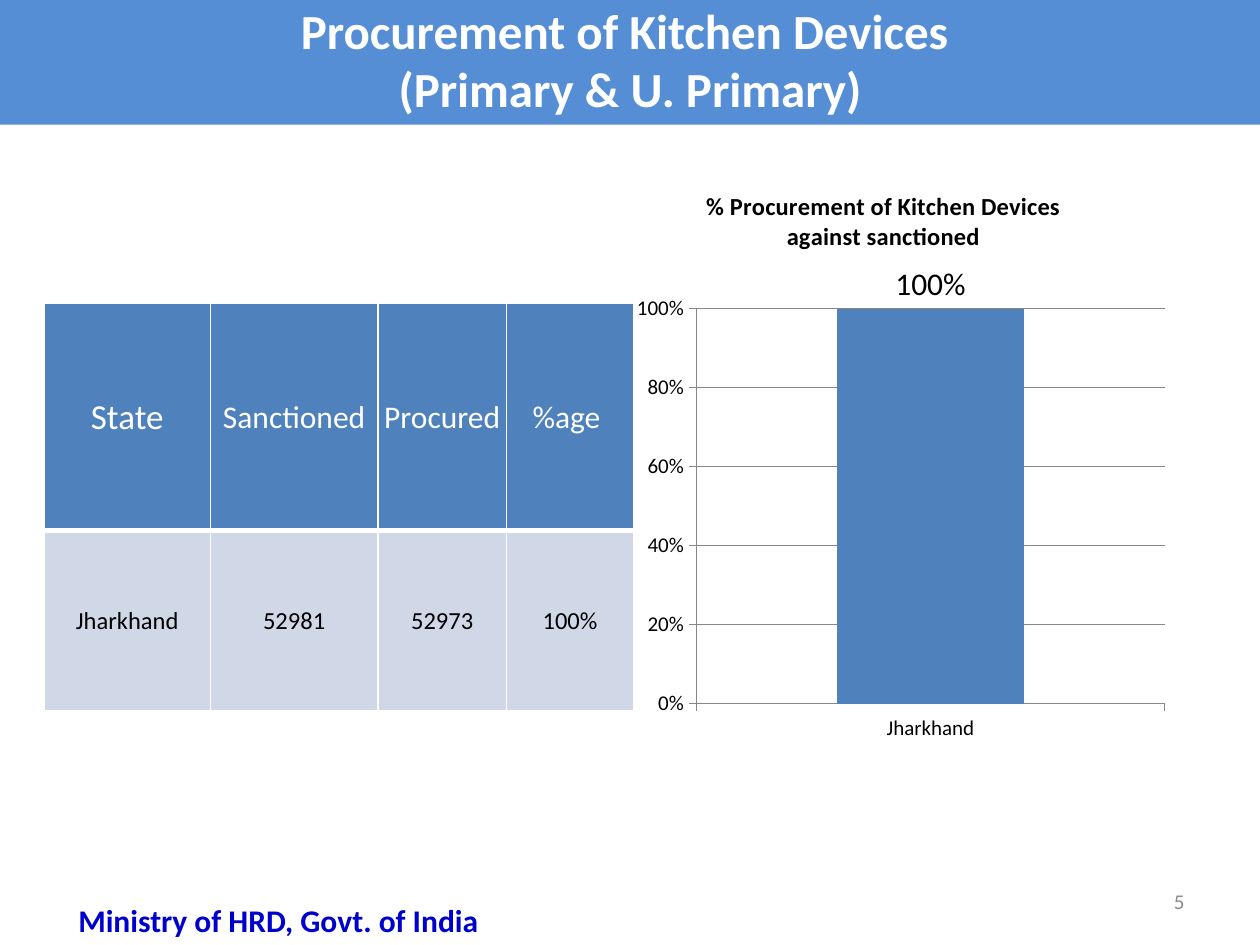
from dataclasses import dataclass

from lxml.etree import SubElement
from pptx import Presentation
from pptx.chart.chart import Chart
from pptx.chart.data import CategoryChartData
from pptx.dml.color import RGBColor
from pptx.enum.chart import XL_CHART_TYPE, XL_LABEL_POSITION, XL_TICK_MARK
from pptx.enum.text import MSO_ANCHOR, MSO_AUTO_SIZE, PP_ALIGN
from pptx.oxml import parse_xml
from pptx.oxml.ns import nsdecls, qn
from pptx.slide import Slide
from pptx.table import _Cell
from pptx.text.text import TextFrame
from pptx.util import Inches, Pt


@dataclass(frozen=True)
class Theme:
    font: str = "Calibri"
    banner: str = "558ED5"
    accent: str = "4F81BD"
    band: str = "D0D8E8"
    white: str = "FFFFFF"
    black: str = "000000"
    axis: str = "878787"
    number: str = "8C8C8C"
    ministry: str = "0000CC"
    title_size: int = 28
    state_size: int = 20
    large_size: int = 18
    body_size: int = 14
    small_size: int = 12


@dataclass(frozen=True)
class Caption:
    text: str
    box: tuple[float, float, float, float]
    size: int
    color: str
    align: PP_ALIGN
    anchor: MSO_ANCHOR
    bold: bool = False


THEME = Theme()
HEADERS = ("State", "Sanctioned", "Procured", "%age ")
VALUES = ("Jharkhand", "52981", "52973", "100%")
COLUMN_WIDTHS = (1.32, 1.33, 1.02, 1.01)
ROW_HEIGHTS = (1.8, 1.43)
CAPTIONS = (
    Caption("5", (7.17, 6.95, 2.33, 0.4), THEME.small_size, THEME.number,
            PP_ALIGN.RIGHT, MSO_ANCHOR.MIDDLE),
    Caption("Ministry of HRD, Govt. of India", (0.25, 7.1, 3.92, 0.4), THEME.large_size,
            THEME.ministry, PP_ALIGN.CENTER, MSO_ANCHOR.TOP, True),
)


def set_font(font, *, size: int, color: str, bold: bool = False) -> None:
    """Apply the theme typeface with a size, colour and weight."""
    font.name = THEME.font
    font.size = Pt(size)
    font.bold = bold
    font.color.rgb = RGBColor.from_string(color)


def write_text(text_frame: TextFrame, text: str, *, size: int, color: str,
               bold: bool = False, align: PP_ALIGN = PP_ALIGN.CENTER) -> None:
    """Fill a text frame with one formatted paragraph per line."""
    text_frame.text = text
    for paragraph in text_frame.paragraphs:
        paragraph.alignment = align
        for run in paragraph.runs:
            set_font(run.font, size=size, color=color, bold=bold)


def add_banner(slide: Slide) -> None:
    """Turn the title placeholder into the banner."""
    title = slide.shapes.title
    title.left, title.top = Inches(0), Inches(-0.24)
    title.width, title.height = Inches(10), Inches(1.23)
    title.fill.solid()
    title.fill.fore_color.rgb = RGBColor.from_string(THEME.banner)
    frame = title.text_frame
    write_text(frame, "Procurement of Kitchen Devices \n(Primary & U. Primary)",
               size=THEME.title_size, color=THEME.white, bold=True)
    frame.auto_size = MSO_AUTO_SIZE.NONE
    frame.vertical_anchor = MSO_ANCHOR.MIDDLE
    frame.paragraphs[0].line_spacing = 1.4


def set_borders(cell: _Cell, top: int, bottom: int) -> None:
    """Draw white borders around a cell."""
    properties = cell._tc.get_or_add_tcPr()
    widths = {"lnL": 1, "lnR": 1, "lnT": top, "lnB": bottom}
    for index, (side, width) in enumerate(widths.items()):
        properties.insert(index, parse_xml(
            f'<a:{side} {nsdecls("a")} w="{Pt(width)}"><a:solidFill>'
            f'<a:srgbClr val="{THEME.white}"/></a:solidFill></a:{side}>'))


def add_device_table(slide: Slide) -> None:
    """Add the table of sanctioned and procured devices."""
    table = slide.shapes.add_table(2, 4, Inches(0.35), Inches(2.41),
                                   Inches(sum(COLUMN_WIDTHS)), Inches(sum(ROW_HEIGHTS))).table
    for column, width in zip(table.columns, COLUMN_WIDTHS):
        column.width = Inches(width)
    for row_index, texts in enumerate((HEADERS, VALUES)):
        is_header = row_index == 0
        table.rows[row_index].height = Inches(ROW_HEIGHTS[row_index])
        for column_index, text in enumerate(texts):
            cell = table.cell(row_index, column_index)
            cell.margin_left = cell.margin_right = cell.margin_top = Inches(0.01)
            cell.margin_bottom = Inches(0)
            cell.vertical_anchor = MSO_ANCHOR.MIDDLE
            cell.fill.solid()
            cell.fill.fore_color.rgb = RGBColor.from_string(
                THEME.accent if is_header else THEME.band)
            header_size = THEME.large_size if column_index else THEME.state_size
            write_text(cell.text_frame, text,
                       size=header_size if is_header else THEME.body_size,
                       color=THEME.white if is_header else THEME.black)
            set_borders(cell, 1 if is_header else 3, 3 if is_header else 1)


def set_layout(element, index: int, **settings: str | float) -> None:
    """Give a chart element a manual layout."""
    for old_layout in element.findall(qn("c:layout")):
        element.remove(old_layout)
    layout = parse_xml(f'<c:layout {nsdecls("c")}><c:manualLayout/></c:layout>')
    for name, value in settings.items():
        SubElement(layout[0], qn(f"c:{name}")).set("val", str(value))
    element.insert(index, layout)


def format_axes(chart: Chart) -> None:
    """Set the scale, ticks, lines and labels of both axes."""
    value_axis = chart.value_axis
    value_axis.minimum_scale, value_axis.maximum_scale = 0, 1
    value_axis.major_unit = 0.2
    value_axis.has_major_gridlines = True
    value_axis.tick_labels.number_format = "0%"
    value_axis.tick_labels.number_format_is_linked = False
    for axis in (chart.category_axis, value_axis):
        axis.major_tick_mark = XL_TICK_MARK.OUTSIDE
        set_font(axis.tick_labels.font, size=THEME.small_size, color=THEME.black)
    for owner in (chart.category_axis, value_axis, value_axis.major_gridlines):
        owner.format.line.color.rgb = RGBColor.from_string(THEME.axis)
        owner.format.line.width = Pt(0.75)


def add_procurement_chart(slide: Slide) -> None:
    """Add the column chart of procurement against sanction."""
    data = CategoryChartData(number_format="0%")
    data.categories = ["Jharkhand"]
    data.add_series("Procurement", [1])
    chart = slide.shapes.add_chart(XL_CHART_TYPE.COLUMN_CLUSTERED, Inches(4.92), Inches(1.42),
                                   Inches(4.33), Inches(4.68), data).chart
    set_font(chart.font, size=THEME.large_size, color=THEME.black)
    chart.has_legend = False
    chart.has_title = True
    write_text(chart.chart_title.text_frame,
               "% Procurement of Kitchen Devices against sanctioned",
               size=THEME.body_size, color=THEME.black, bold=True)
    set_layout(chart.chart_title._element, 1, xMode="edge", yMode="edge", x=0.15, y=0.01)
    set_layout(chart._chartSpace.chart.plotArea, 0, layoutTarget="inner", xMode="edge",
               yMode="edge", x=0.14, y=0.22, w=0.86, h=0.67)
    format_axes(chart)
    plot = chart.plots[0]
    plot.gap_width = 150
    plot.vary_by_categories = False
    series = plot.series[0]
    series.format.fill.solid()
    series.format.fill.fore_color.rgb = RGBColor.from_string(THEME.accent)
    labels = series.data_labels
    labels.show_value = True
    labels.number_format = "0%"
    labels.number_format_is_linked = False
    labels.position = XL_LABEL_POSITION.OUTSIDE_END
    set_font(labels.font, size=THEME.large_size, color=THEME.black)


def add_caption(slide: Slide, caption: Caption) -> None:
    """Add a text box at the foot of the slide."""
    frame = slide.shapes.add_textbox(*map(Inches, caption.box)).text_frame
    frame.word_wrap = True
    frame.vertical_anchor = caption.anchor
    write_text(frame, caption.text, size=caption.size, color=caption.color,
               bold=caption.bold, align=caption.align)


def main() -> None:
    """Build and save the presentation."""
    presentation = Presentation()
    presentation.slide_width, presentation.slide_height = Inches(10), Inches(7.5)
    slide = presentation.slides.add_slide(presentation.slide_layouts[5])
    add_banner(slide)
    add_device_table(slide)
    add_procurement_chart(slide)
    for caption in CAPTIONS:
        add_caption(slide, caption)
    presentation.save("out.pptx")


if __name__ == "__main__":
    main()
